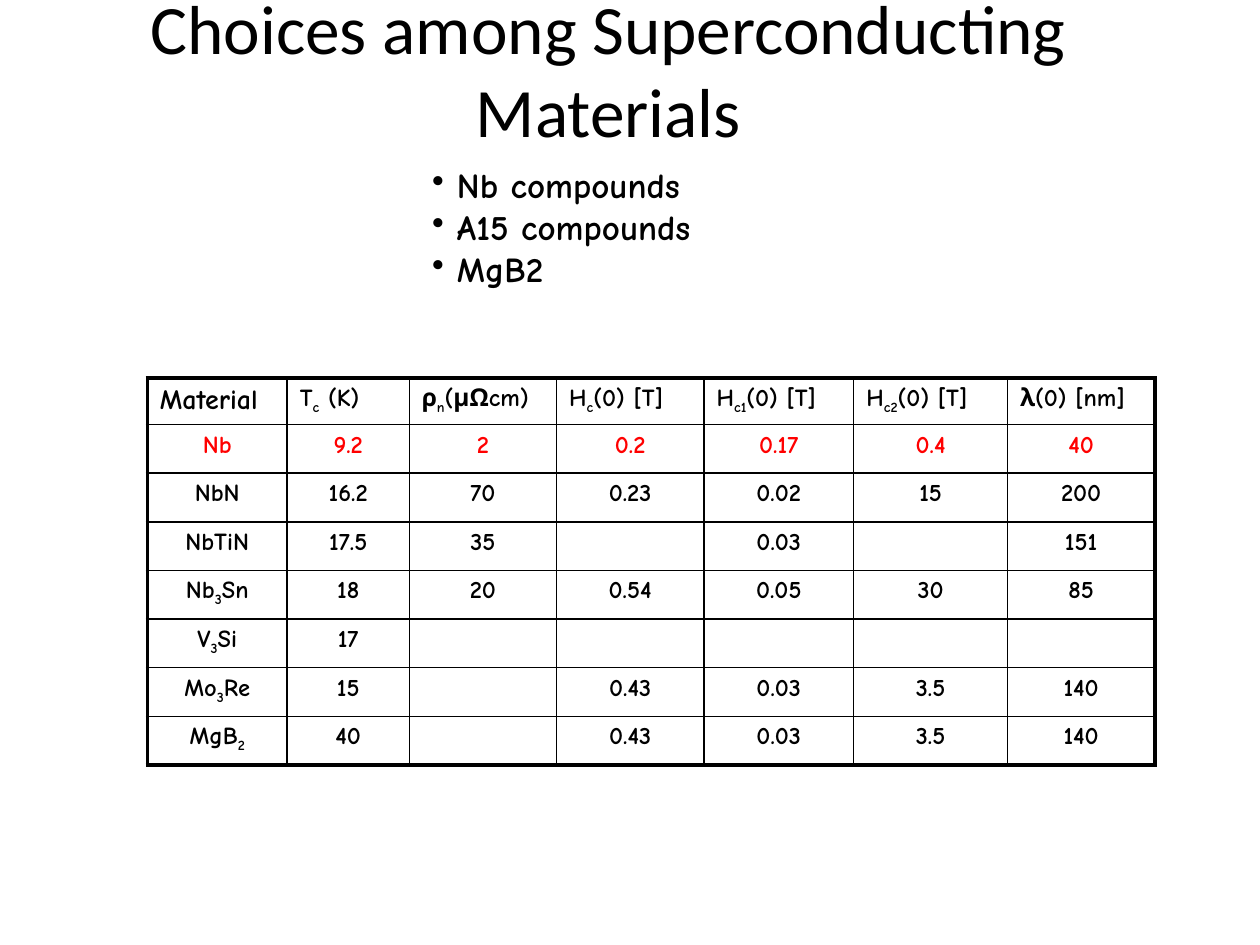
from dataclasses import dataclass

from lxml.etree import SubElement
from pptx import Presentation
from pptx.dml.color import RGBColor as RGB
from pptx.enum.text import MSO_ANCHOR as Anchor, PP_ALIGN as Align
from pptx.oxml import parse_xml
from pptx.oxml.ns import nsdecls, qn
from pptx.util import Cm, Pt

# Content: text between underscores is set as subscript
TITLE = "Choices among Superconducting Materials"
BULLETS = [" Nb compounds", " A15 compounds", " MgB2"]
HEADER = ["Material", "T_c_ (K)", "ρ_n_(μΩcm)", "H_c_(0) [T]",
          "H_c1_(0) [T]", "H_c2_(0) [T]", "λ(0) [nm]"]
MATERIALS = [
    ["Nb", "9.2", "2", "0.2", "0.17", "0.4", "40"],
    ["NbN", "16.2", "70", "0.23", "0.02", "15", "200"],
    ["NbTiN", "17.5", "35", "", "0.03", "", "151"],
    ["Nb_3_Sn", "18", "20", "0.54", "0.05", "30", "85"],
    ["V_3_Si", "17", "", "", "", "", ""],
    ["Mo_3_Re", "15", "", "0.43", "0.03", "3.5", "140"],
    ["MgB_2_", "40", "", "0.43", "0.03", "3.5", "140"],
]
COL_WIDTHS = [2.82, 2.46, 2.97, 2.97, 3.02, 3.1, 2.97]
HEADER_HEIGHT, ROW_HEIGHT = 0.94, 0.98


@dataclass(frozen=True)
class Theme:
    title_font: str = "Calibri"
    body_font: str = "Comic Neue"
    ink: str = "000000"
    highlight: str = "FF0000"
    title_size: float = 39.6
    bullet_size: float = 20
    corner_size: float = 16
    cell_size: float = 14
    outer_line: float = 2.25
    inner_line: float = 1


T = Theme()


def add_run(p, text, size, font=T.body_font, color=T.ink, bold=True, sub=False):
    r = p.add_run()
    r.text = text
    f = r.font
    f.name, f.size, f.bold = font, Pt(size), bold
    f.color.rgb = RGB.from_string(color)
    if sub:
        r._r.get_or_add_rPr().set("baseline", "-25000")


def add_box(slide, left, top, width, height, wrap):
    sp = slide.shapes.add_textbox(Cm(left), Cm(top), Cm(width), Cm(height))
    sp.text_frame.word_wrap = wrap
    return sp.text_frame


def set_borders(cell, widths):
    """Widths in points: left, right, top, bottom."""
    tc_pr = cell._tc.get_or_add_tcPr()
    for i, (side, width) in enumerate(zip("LRTB", widths)):
        tc_pr.insert(i, parse_xml(
            f'<a:ln{side} {nsdecls("a")} w="{Pt(width)}"><a:solidFill>'
            f'<a:srgbClr val="{T.ink}"/></a:solidFill></a:ln{side}>'))


def fill_cell(cell, text, size, color, align):
    p = cell.text_frame.paragraphs[0]
    p.alignment = align
    for i, part in enumerate(text.split("_")):
        if part:
            add_run(p, part, size, color=color, sub=i % 2 == 1)
    if not text:
        p._p.get_or_add_endParaRPr().set("sz", str(size * 100))


def add_title(slide):
    tf = add_box(slide, 1.47, 0.43, 21.59, 1.91, True)
    tf.vertical_anchor = Anchor.MIDDLE
    p = tf.paragraphs[0]
    p.alignment = Align.CENTER
    add_run(p, TITLE, T.title_size, T.title_font, bold=False)


def add_materials_table(slide):
    rows = [HEADER] + MATERIALS
    heights = [HEADER_HEIGHT] + [ROW_HEIGHT] * len(MATERIALS)
    table = slide.shapes.add_table(
        len(rows), len(HEADER), Cm(2.97), Cm(7.62),
        Cm(sum(COL_WIDTHS)), Cm(sum(heights))).table
    table.first_row = table.horz_banding = False
    for col, width in zip(table.columns, COL_WIDTHS):
        col.width = Cm(width)
    last_row, last_col = len(rows) - 1, len(HEADER) - 1
    for i, row in enumerate(rows):
        table.rows[i].height = Cm(heights[i])
        for j, text in enumerate(row):
            cell = table.cell(i, j)
            cell.fill.background()
            edges = (j == 0, j == last_col, i == 0, i == last_row)
            set_borders(cell, [T.outer_line if e else T.inner_line for e in edges])
            fill_cell(cell, text,
                      T.corner_size if i == j == 0 else T.cell_size,
                      T.highlight if i == 1 else T.ink,
                      Align.LEFT if i == 0 else Align.CENTER)


def add_bullets(slide):
    tf = add_box(slide, 8.46, 3.18, 6.53, 2.79, False)
    for i, text in enumerate(BULLETS):
        p = tf.add_paragraph() if i else tf.paragraphs[0]
        SubElement(p._p.get_or_add_pPr(), qn("a:buChar")).set("char", "•")
        add_run(p, text, T.bullet_size)


def main():
    prs = Presentation()
    prs.slide_width, prs.slide_height = Cm(25.4), Cm(19.05)
    slide = prs.slides.add_slide(prs.slide_layouts[6])
    add_title(slide)
    add_materials_table(slide)
    add_bullets(slide)
    prs.save("out.pptx")


if __name__ == "__main__":
    main()
